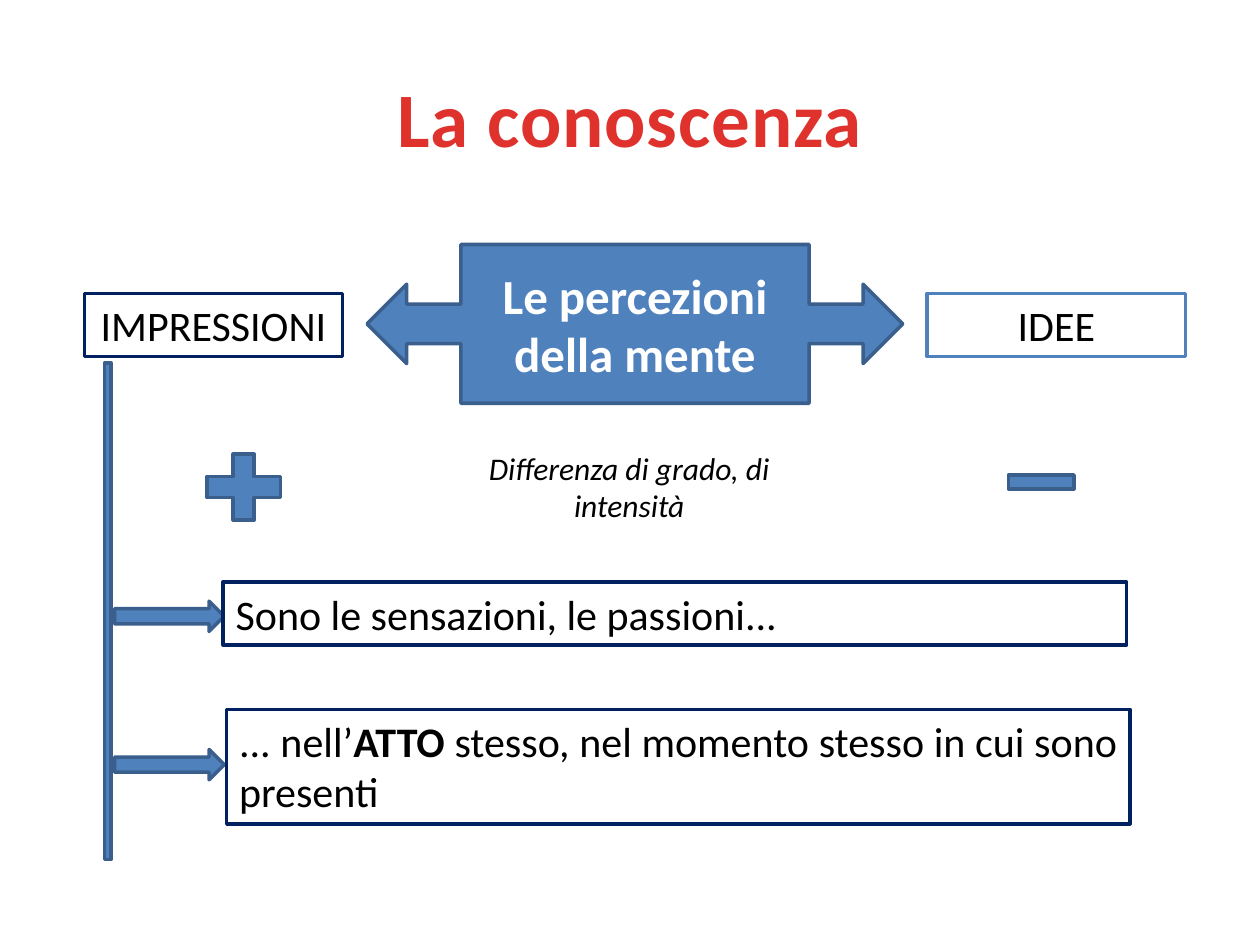
from pptx import Presentation
from pptx import util as u
from pptx.dml.color import RGBColor
from pptx.enum import shapes, text

BLUE = RGBColor(0x4F, 0x81, 0xBD)
EDGE = RGBColor(0x3A, 0x5F, 0x8C)
NAVY = RGBColor(0x00, 0x20, 0x60)
RED = RGBColor(0xE0, 0x32, 0x2D)
BLACK = RGBColor(0, 0, 0)
WHITE = RGBColor(0xFF, 0xFF, 0xFF)
FONT = "Calibri"
FORMS = shapes.MSO_SHAPE
CENTER = text.PP_ALIGN.CENTER
JUSTIFY = text.PP_ALIGN.JUSTIFY


def cm(*lengths):
    return [u.Cm(length) for length in lengths]


def write(frame, pieces, size, color=BLACK, align=CENTER, bold=False, italic=False):
    frame.word_wrap = True
    paragraph = frame.paragraphs[0]
    paragraph.alignment = align
    for number, piece in enumerate(pieces):
        run = paragraph.add_run()
        run.text = piece
        run.font.name = FONT
        run.font.size = u.Pt(size)
        run.font.bold = bold or number % 2 == 1
        run.font.italic = italic
        run.font.color.rgb = color


def add_form(slide, form, box, fill=BLUE, edge=EDGE):
    figure = slide.shapes.add_shape(form, *cm(*box))
    figure.shadow.inherit = False
    figure.fill.solid()
    figure.fill.fore_color.rgb = fill
    figure.line.color.rgb = edge
    figure.line.width = u.Pt(2)
    return figure


def add_label(slide, box, pieces, edge=NAVY, align=CENTER):
    label = add_form(slide, FORMS.RECTANGLE, box, WHITE, edge)
    frame = label.text_frame
    frame.vertical_anchor = text.MSO_ANCHOR.TOP
    write(frame, pieces, 24, align=align)
    frame.auto_size = text.MSO_AUTO_SIZE.SHAPE_TO_FIT_TEXT


def add_heading(slide, box):
    heading = slide.shapes.title
    heading.left, heading.top, heading.width, heading.height = cm(*box)
    heading.text_frame.vertical_anchor = text.MSO_ANCHOR.MIDDLE
    write(heading.text_frame, ["La conoscenza"], 44, RED, bold=True)
    heading.text_frame.paragraphs[0].runs[0].font._element.set("spc", "50")


def add_perceptions(slide, box):
    left, top, width, height = box
    label_width, callout_width = 5.21, 10.8
    callout_left = left + (width - callout_width) / 2
    callout = add_form(slide, FORMS.LEFT_RIGHT_ARROW_CALLOUT,
                       (callout_left, top, callout_width, height))
    for index, ratio in enumerate((0.25, 0.25, 0.25, 0.65)):
        callout.adjustments[index] = ratio
    callout.text_frame.vertical_anchor = text.MSO_ANCHOR.MIDDLE
    write(callout.text_frame, ["Le percezioni della mente"], 28, WHITE, bold=True)
    label_top = top + 0.99
    add_label(slide, (left, label_top, label_width, 1.27), ["IMPRESSIONI"])
    add_label(slide, (left + width - label_width, label_top, label_width, 1.27),
              ["IDEE"], edge=BLUE)


def add_degrees(slide, box):
    left, top, width, height = box
    difference = slide.shapes.add_textbox(*cm(left + 4.98, top, 7.59, height))
    write(difference.text_frame, ["Differenza di grado, di intensità"], 18, italic=True)
    difference.text_frame.auto_size = text.MSO_AUTO_SIZE.SHAPE_TO_FIT_TEXT
    add_form(slide, FORMS.MATH_PLUS, (left, top, 2.01, height))
    add_form(slide, FORMS.MATH_MINUS, (left + width - 1.8, top + 0.2, 1.8, 1.19))


def add_impressions(slide, box):
    left, top, width, height = box
    add_form(slide, FORMS.RECTANGLE, (left, top, 0.13, height))
    traits = [
        (4.41, 1.27, 4.8, 2.39, ["Sono le sensazioni, le passioni..."]),
        (6.98, 2.31, 7.79, 2.46,
         ["... nell’", "ATTO", " stesso, nel momento stesso in cui sono presenti"]),
    ]
    for label_drop, label_height, arrow_drop, indent, pieces in traits:
        add_form(slide, FORMS.RIGHT_ARROW, (left + 0.2, top + arrow_drop, 2.21, 0.61))
        add_label(slide, (left + indent, top + label_drop, width - 2.46, label_height),
                  pieces, align=JUSTIFY)


def main():
    deck = Presentation()
    deck.slide_width, deck.slide_height = cm(25.4, 19.05)
    slide = deck.slides.add_slide(deck.slide_layouts[5])
    add_heading(slide, (1.27, 0.76, 22.86, 3.18))
    add_perceptions(slide, (1.7, 4.93, 22.2, 3.2))
    add_degrees(slide, (3.91, 8.92, 17.98, 1.8))
    add_impressions(slide, (2.11, 7.32, 20.67, 10.01))
    deck.save("out.pptx")


if __name__ == "__main__":
    main()
